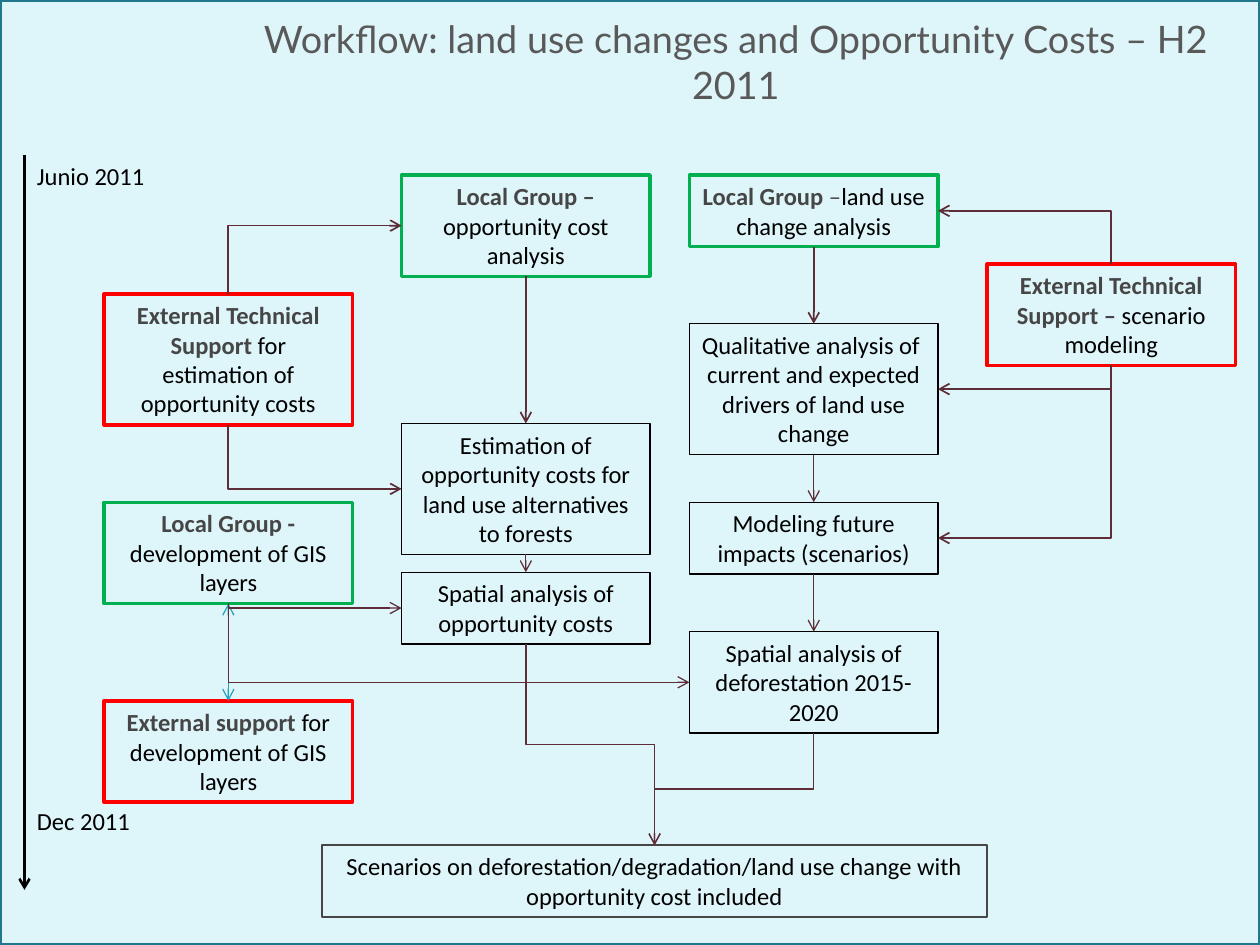
from lxml.etree import SubElement
from pptx import Presentation
from pptx.dml.color import RGBColor
from pptx.enum.shapes import MSO_CONNECTOR as LINK, MSO_SHAPE as SHAPE
from pptx.enum.text import MSO_ANCHOR as ANCHOR, MSO_AUTO_SIZE as FIT, PP_ALIGN as ALIGN
from pptx.oxml.ns import qn
from pptx.util import Pt

COLORS = {
    "paper": "DEF5FA", "frame": "21788D", "title": "595959", "ink": "000000",
    "strong": "464646", "local": "00B050", "external": "FF0000",
    "flow": "5E2D37", "exchange": "28A1BE",
}
SLIDE_W, SLIDE_H = 720, 540
STEP_W = 142
LINE_H, PADDING = 16.9, 7.2
TOP, LEFT, BOTTOM, RIGHT = range(4)


def color(name):
    return RGBColor.from_string(COLORS[name])


def write(shape, runs, size=14, font="Calibri", align=ALIGN.CENTER,
          anchor=ANCHOR.TOP, wrap=True, fit=FIT.SHAPE_TO_FIT_TEXT):
    frame = shape.text_frame
    frame.word_wrap, frame.auto_size, frame.vertical_anchor = wrap, fit, anchor
    paragraph = frame.paragraphs[0]
    paragraph.alignment = align
    for text, ink, bold in runs:
        run = paragraph.add_run()
        run.text = text
        run.font.name, run.font.size, run.font.bold = font, Pt(size), bold
        run.font.color.rgb = color(ink)


def add_box(slide, left, top, width, height, line, weight, fill=None):
    box = slide.shapes.add_shape(SHAPE.RECTANGLE, Pt(left), Pt(top), Pt(width), Pt(height))
    box.shadow.inherit = False
    if fill:
        box.fill.solid()
        box.fill.fore_color.rgb = color(fill)
    else:
        box.fill.background()
    box.line.color.rgb = color(line)
    box.line.width = Pt(weight)
    return box


def add_step(slide, left, top, lines, plain, strong="", dash="",
             line="ink", weight=0.75, width=STEP_W):
    step = add_box(slide, left, top, width, lines * LINE_H + PADDING, line, weight)
    runs = [(strong, "strong", True), (dash, "strong", False), (plain, "ink", False)]
    write(step, [run for run in runs if run[0]])
    return step


def style_link(link, weight, ends=("tailEnd",), line="flow"):
    link.line.color.rgb = color(line)
    link.line.width = Pt(weight)
    props = link.element.spPr
    for end in ends:
        SubElement(props.find(qn("a:ln")), qn("a:" + end), type="arrow")
    SubElement(props, qn("a:effectLst"))


def link_down(slide, source, target, weight=0.75, **style):
    link = slide.shapes.add_connector(LINK.STRAIGHT, 0, 0, 0, 0)
    link.begin_connect(source, BOTTOM)
    link.end_connect(target, TOP)
    style_link(link, weight, **style)


def link_corner(slide, source, source_side, target, target_side, weight=1):
    link = slide.shapes.add_connector(LINK.ELBOW, 0, 0, 0, 0)
    link.begin_connect(target, target_side)
    link.end_connect(source, source_side)
    link.element.spPr.find(qn("a:prstGeom")).set("prst", "bentConnector2")
    style_link(link, weight, ends=("headEnd",))


def link_merge(slide, source, target):
    start_x, start_y = source.left + source.width // 2, source.top + source.height
    end_x, end_y = target.left + target.width // 2, target.top
    run, drop = abs(end_x - start_x), end_y - start_y
    left = (start_x + end_x - drop) // 2
    top = (start_y + end_y - run) // 2
    link = slide.shapes.add_connector(LINK.ELBOW, left, top, left + drop, top + run)
    turn = link.element.spPr.find(qn("a:xfrm"))
    if end_x > start_x:
        turn.set("rot", "16200000")
        turn.set("flipH", "1")
    else:
        turn.set("rot", "5400000")
    style_link(link, 0.75)


def add_frame(slide):
    frame = add_box(slide, 0, 0, SLIDE_W, SLIDE_H, "frame", 2, fill="paper")
    slide.shapes.element.insert(2, frame.element)


def add_title(slide, left, top, width, height):
    title = slide.shapes.title
    title.left, title.top, title.width, title.height = map(Pt, (left, top, width, height))
    heading = "Workflow: land use changes and Opportunity Costs – H2 2011"
    write(title, [(heading, "title", False)], size=21.6, font="Lato",
          anchor=ANCHOR.MIDDLE, fit=FIT.NONE)


def add_timeline(slide, left, top, height):
    axis = slide.shapes.add_connector(LINK.STRAIGHT, Pt(left), Pt(top), Pt(left), Pt(top + height))
    style_link(axis, 1.5, line="ink")
    for date, offset in (("Junio 2011", 0), ("Dec 2011", 368.5)):
        label = slide.shapes.add_textbox(Pt(left), Pt(top + offset), Pt(76), Pt(24))
        write(label, [(date, "ink", False)], align=ALIGN.LEFT, wrap=False)


def add_support_column(slide, left, top):
    costs = add_step(slide, left, top, 4, "for estimation of opportunity costs",
                     "External Technical Support ", line="external", weight=2)
    local = add_step(slide, left, top + 119, 3, "development of GIS layers",
                     "Local Group - ", line="local", weight=2)
    layers = add_step(slide, left, top + 232.5, 3, "for development of GIS layers",
                      "External support ", line="external", weight=2)
    link_down(slide, local, layers, line="exchange", ends=("headEnd", "tailEnd"))
    return costs, local


def add_cost_column(slide, left, top):
    group = add_step(slide, left, top, 3, "opportunity cost analysis",
                     "Local Group – ", line="local", weight=2)
    estimate = add_step(slide, left, top + 142, 4,
                        "Estimation of opportunity costs for land use alternatives to forests")
    spatial = add_step(slide, left, top + 227, 2, "Spatial analysis of opportunity costs")
    link_down(slide, group, estimate, weight=1)
    link_down(slide, estimate, spatial)
    return group, estimate, spatial


def add_land_column(slide, left, top):
    group = add_step(slide, left, top, 2, "land use change analysis",
                     "Local Group", " –", line="local", weight=2)
    drivers = add_step(slide, left, top + 85, 4,
                       "Qualitative analysis of  current and expected drivers of land use change")
    impacts = add_step(slide, left, top + 187, 2, "Modeling future impacts (scenarios)")
    spatial = add_step(slide, left, top + 261, 3, "Spatial analysis of deforestation 2015-2020")
    link_down(slide, group, drivers, weight=1)
    link_down(slide, drivers, impacts)
    link_down(slide, impacts, spatial)
    return group, drivers, impacts, spatial


def add_workflow(slide, left, top):
    support, gis = add_support_column(slide, left, top + 68)
    cost_group, estimate, cost_map = add_cost_column(slide, left + 170, top)
    land_group, drivers, impacts, land_map = add_land_column(slide, left + 334.5, top)
    modeling = add_step(slide, left + 504.5, top + 51, 3, "scenario modeling",
                        "External Technical Support – ", line="external", weight=2)
    scenarios = add_step(
        slide, left + 124.5, top + 383, 2,
        "Scenarios on deforestation/degradation/land use change with opportunity cost included",
        line="strong", weight=1.25, width=380)

    link_corner(slide, support, TOP, cost_group, LEFT)
    link_corner(slide, support, BOTTOM, estimate, LEFT)
    link_corner(slide, modeling, TOP, land_group, RIGHT)
    for target in (drivers, impacts):
        link_corner(slide, modeling, BOTTOM, target, RIGHT)
    for target in (cost_map, land_map):
        link_corner(slide, gis, BOTTOM, target, LEFT, weight=0.75)
        link_merge(slide, target, scenarios)


def main():
    deck = Presentation()
    deck.slide_width, deck.slide_height = Pt(SLIDE_W), Pt(SLIDE_H)
    slide = deck.slides.add_slide(deck.slide_layouts[5])
    add_frame(slide)
    add_title(slide, 133, 10, 575, 50)
    add_timeline(slide, 14, 88.5, 420)
    add_workflow(slide, 59.5, 100)
    deck.save("out.pptx")


if __name__ == "__main__":
    main()
